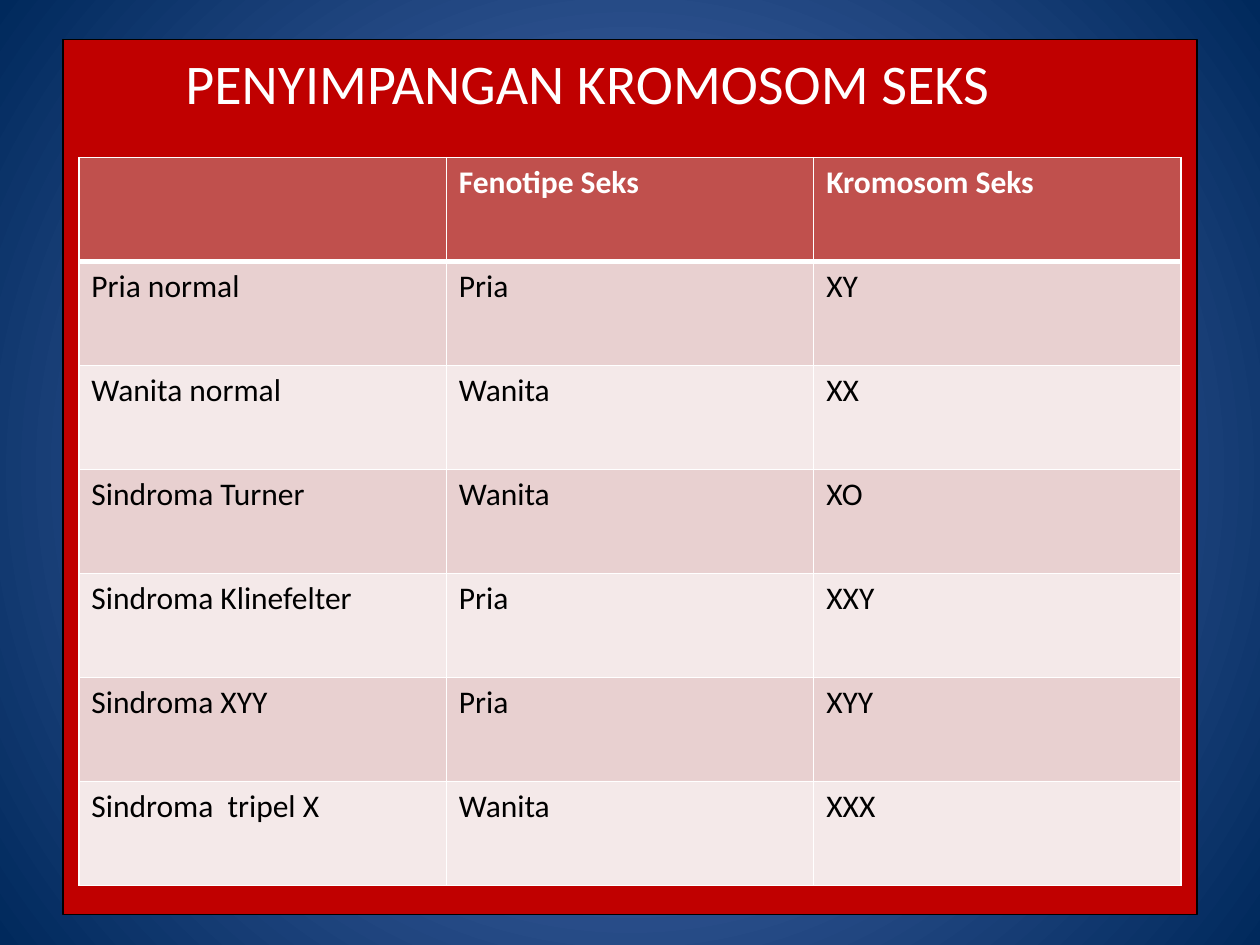
from lxml import etree
from pptx import Presentation
from pptx.dml.color import RGBColor
from pptx.enum.shapes import MSO_SHAPE
from pptx.enum.text import MSO_ANCHOR, PP_ALIGN
from pptx.oxml.ns import qn
from pptx.util import Pt

RECT = MSO_SHAPE.RECTANGLE
TOP = MSO_ANCHOR.TOP
LEFT = PP_ALIGN.LEFT
FONT = "Calibri"
WHITE = RGBColor(0xFF, 0xFF, 0xFF)
BLACK = RGBColor(0, 0, 0)
RED = RGBColor(0xC0, 0, 0)
ROSE = RGBColor(0xC0, 0x50, 0x4D)
PINK = RGBColor(0xE8, 0xD0, 0xD0)
PALE = RGBColor(0xF4, 0xE9, 0xE9)
BLUE = RGBColor(0x5E, 0x7C, 0xC5)
NAVY = RGBColor(0, 0x29, 0x5C)

TITLE = "PENYIMPANGAN KROMOSOM SEKS"
ROWS = [
    ("", "Fenotipe Seks", "Kromosom Seks"),
    ("Pria normal", "Pria", "XY"),
    ("Wanita normal", "Wanita", "XX"),
    ("Sindroma Turner", "Wanita", "XO"),
    ("Sindroma Klinefelter", "Pria", "XXY"),
    ("Sindroma XYY", "Pria", "XYY"),
    ("Sindroma  tripel X", "Wanita", "XXX"),
]


def add_text(para, text, size, color, bold=False):
    run = para.add_run()
    run.text = text
    font = run.font
    font.name, font.size, font.bold = FONT, Pt(size), bold
    font.color.rgb = color


def add_back(slide):
    fill = slide.background.fill
    fill.gradient()
    for stop, place, color in zip(fill.gradient_stops, (0, 1), (BLUE, NAVY)):
        stop.position = place
        stop.color.rgb = color
    grad = slide.element.find(".//" + qn("a:gradFill"))
    grad.remove(grad.find(qn("a:lin")))
    ring = etree.SubElement(grad, qn("a:path"), path="circle")
    etree.SubElement(ring, qn("a:fillToRect"), dict.fromkeys("ltrb", "50000"))


def add_panel(slide, left, top, width, height):
    panel = slide.shapes.add_shape(RECT, Pt(left), Pt(top), Pt(width), Pt(height))
    panel.shadow.inherit = False
    panel.fill.solid()
    panel.fill.fore_color.rgb = RED
    panel.line.color.rgb = BLACK
    panel.line.width = Pt(0.75)
    frame = panel.text_frame
    frame.word_wrap = True
    frame.vertical_anchor = TOP
    frame.margin_left, frame.margin_top = Pt(70), Pt(5)
    para = frame.paragraphs[0]
    para.alignment = LEFT
    add_text(para, TITLE, 32, WHITE)


def add_edge(cell, side, width):
    props = cell._tc.get_or_add_tcPr()
    line = etree.SubElement(props, qn("a:ln" + side), w=str(Pt(width)))
    fill = etree.SubElement(line, qn("a:solidFill"))
    etree.SubElement(fill, qn("a:srgbClr"), val=str(WHITE))


def add_grid(slide, left, top, width, height):
    count, span = len(ROWS), len(ROWS[0])
    table = slide.shapes.add_table(
        count, span, Pt(left), Pt(top), Pt(width), Pt(height)).table
    for col in table.columns:
        col.width = Pt(width / span)
    for i, texts in enumerate(ROWS):
        table.rows[i].height = Pt(height / count)
        head = i == 0
        shade = ROSE if head else (PALE, PINK)[i % 2]
        edges = {"L": 1, "R": 1, "T": 3 if i == 1 else 1, "B": 3 if head else 1}
        for j, text in enumerate(texts):
            cell = table.cell(i, j)
            for side, weight in edges.items():
                add_edge(cell, side, weight)
            cell.fill.solid()
            cell.fill.fore_color.rgb = shade
            if text:
                para = cell.text_frame.paragraphs[0]
                add_text(para, text, 18, WHITE if head else BLACK, head)


def main():
    deck = Presentation()
    deck.slide_width, deck.slide_height = Pt(720), Pt(540)
    slide = deck.slides.add_slide(deck.slide_layouts[6])
    add_back(slide)
    add_panel(slide, 36, 22.5, 648, 500)
    add_grid(slide, 45, 90, 630, 416)
    deck.save("out.pptx")


if __name__ == "__main__":
    main()
